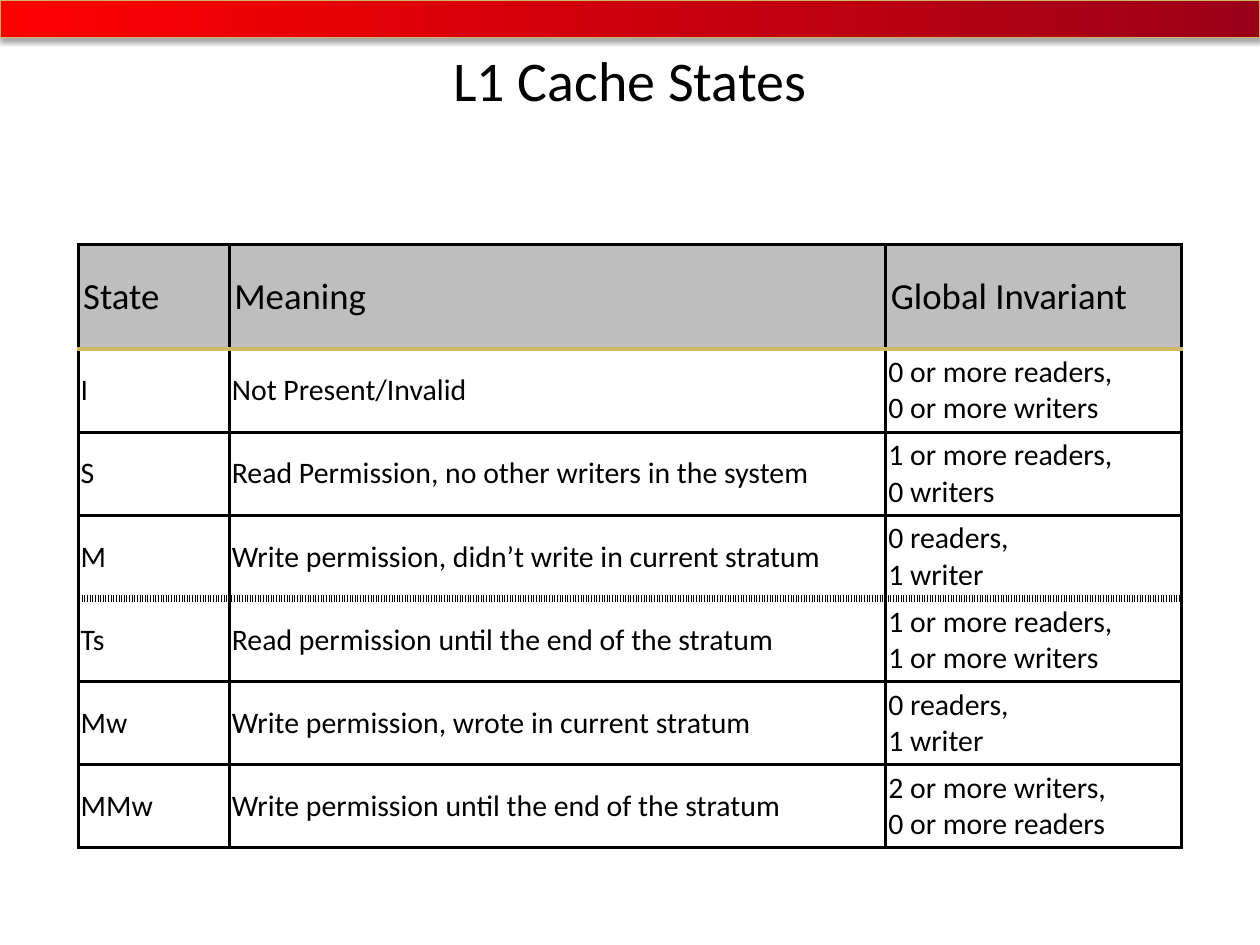
from dataclasses import dataclass

import lxml.etree
import pptx
import pptx.dml.color
import pptx.enum.dml
import pptx.enum.shapes
import pptx.enum.text
import pptx.oxml.ns
import pptx.util

Inches = pptx.util.Inches
Pt = pptx.util.Pt
RGB = pptx.dml.color.RGBColor.from_string
MIDDLE = pptx.enum.text.MSO_ANCHOR.MIDDLE
LEFT = pptx.enum.text.PP_ALIGN.LEFT
CENTER = pptx.enum.text.PP_ALIGN.CENTER


@dataclass(frozen=True)
class Theme:
    font: str = "Calibri"
    ink: str = "000000"
    band_start: str = "FF0000"
    band_end: str = "9B0019"
    band_line: str = "CCB661"
    header_fill: str = "7F7F7F"
    header_rule: str = "CEB966"
    title_size: int = 32
    header_size: int = 21
    body_size: int = 17


HEADERS = ["State", "Meaning", "Global Invariant"]
STATES = [
    ("I", "Not Present/Invalid", "0 or more readers,\n0 or more writers"),
    ("S", "Read Permission, no other writers in the system", "1 or more readers,\n0 writers"),
    ("M", "Write permission, didn’t write in current stratum", "0 readers,\n1 writer"),
    ("Ts", "Read permission until the end of the stratum", "1 or more readers,\n1 or more writers"),
    ("Mw", "Write permission, wrote in current stratum", "0 readers,\n1 writer"),
    ("MMw", "Write permission until the end of the stratum", "2 or more writers,\n0 or more readers"),
]
COLUMN_WIDTHS = [1.2, 5.21, 2.35]
ROW_HEIGHTS = [0.83] + [0.66] * len(STATES)


def add_xml(parent, tag, **attrs):
    values = {name: str(value) for name, value in attrs.items()}
    return lxml.etree.SubElement(parent, pptx.oxml.ns.qn(tag), values)


def write_text(tf, text, *, font, size, color, align=LEFT):
    tf.word_wrap = True
    tf.text = text
    for p in tf.paragraphs:
        p.alignment = align
        for r in p.runs:
            r.font.name = font
            r.font.size = Pt(size)
            r.font.bold = False
            r.font.color.rgb = RGB(color)


def add_border(cell, side, color, width, dash):
    ln = add_xml(cell._tc.get_or_add_tcPr(), f"a:ln{side}", w=Pt(width))
    add_xml(add_xml(ln, "a:solidFill"), "a:srgbClr", val=color)
    add_xml(ln, "a:prstDash", val=dash)


class SlideBuilder:
    def __init__(self, s, theme):
        self.s = s
        self.theme = theme

    def band(self, left, top, width, height):
        sp = self.s.shapes.add_shape(
            pptx.enum.shapes.MSO_SHAPE.RECTANGLE,
            Inches(left), Inches(top), Inches(width), Inches(height))
        sp.fill.gradient()
        sp.fill.gradient_angle = 0
        stops = sp.fill.gradient_stops
        for stop, color in zip(stops, (self.theme.band_start, self.theme.band_end)):
            stop.color.rgb = RGB(color)
        sp.line.color.rgb = RGB(self.theme.band_line)
        sp.line.width = Pt(0.75)
        sp.shadow.inherit = False
        effects = sp._element.spPr.find(pptx.oxml.ns.qn("a:effectLst"))
        shadow = add_xml(effects, "a:outerShdw", blurRad=Pt(3.1), dist=Pt(1.8),
                         dir=90 * 60000, rotWithShape=0)
        color = add_xml(shadow, "a:srgbClr", val=self.theme.ink)
        add_xml(color, "a:alpha", val=35000)
        self.s.shapes._spTree.insert(2, sp._element)

    def title(self, text, left, top, width, height):
        sp = self.s.shapes.title
        sp.left, sp.top = Inches(left), Inches(top)
        sp.width, sp.height = Inches(width), Inches(height)
        sp.text_frame.vertical_anchor = MIDDLE
        write_text(sp.text_frame, text, font=self.theme.font,
                   size=self.theme.title_size, color=self.theme.ink, align=CENTER)

    def table(self, rows, left, top, widths, heights, dotted_rule):
        table = self.s.shapes.add_table(
            len(rows), len(widths), Inches(left), Inches(top),
            Inches(sum(widths)), Inches(sum(heights))).table
        table.first_row = False
        table.horz_banding = False
        for column, width in zip(table.columns, widths):
            column.width = Inches(width)
        solid = (self.theme.ink, 2, "solid")
        rules = [solid] * (len(rows) + 1)
        rules[1] = (self.theme.header_rule, 2, "solid")
        rules[dotted_rule] = (self.theme.ink, 4, "sysDot")
        for i, values in enumerate(rows):
            table.rows[i].height = Inches(heights[i])
            for j, text in enumerate(values):
                borders = {"L": solid, "R": solid, "T": rules[i], "B": rules[i + 1]}
                self.cell(table.cell(i, j), text, borders, header=i == 0)

    def cell(self, cell, text, borders, header):
        inset = Inches(0.04 if header else 0.02)
        cell.margin_left = cell.margin_right = inset
        cell.margin_top = cell.margin_bottom = inset
        cell.vertical_anchor = MIDDLE
        size = self.theme.header_size if header else self.theme.body_size
        write_text(cell.text_frame, text, font=self.theme.font,
                   size=size, color=self.theme.ink)
        for side, border in borders.items():
            add_border(cell, side, *border)
        if header:
            cell.fill.solid()
            cell.fill.fore_color.rgb = RGB(self.theme.header_fill)
            color = cell._tc.tcPr.find(pptx.oxml.ns.qn("a:solidFill"))[0]
            add_xml(color, "a:alpha", val=50000)
        else:
            cell.fill.background()


def main():
    prs = pptx.Presentation()
    prs.slide_width, prs.slide_height = Inches(10), Inches(7.5)
    s = prs.slides.add_slide(prs.slide_layouts[5])
    builder = SlideBuilder(s, Theme())
    builder.band(0, 0, 10, 0.3)
    builder.title("L1 Cache States", 0.5, 0.3, 9, 0.66)
    builder.table([HEADERS] + STATES, 0.62, 1.94, COLUMN_WIDTHS, ROW_HEIGHTS,
                  dotted_rule=4)
    prs.save("out.pptx")


if __name__ == "__main__":
    main()
